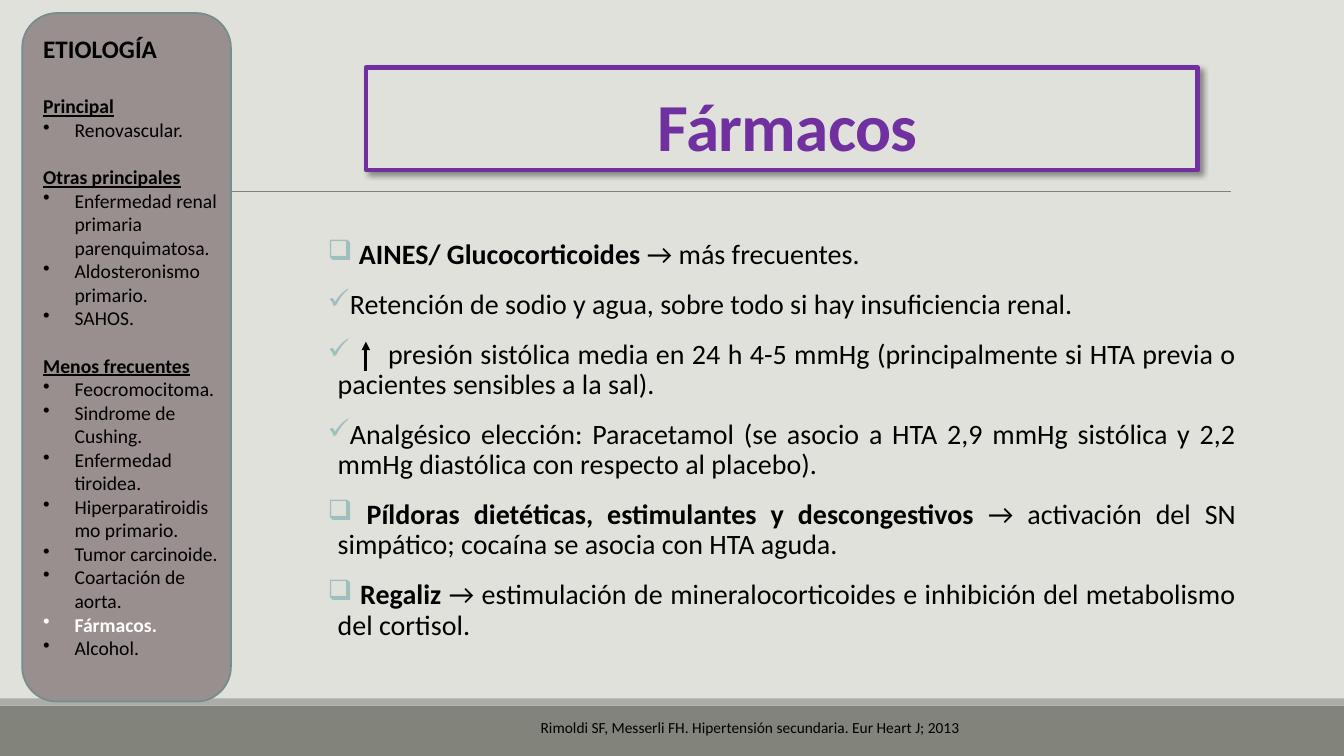
from lxml import etree
from pptx import Presentation
from pptx.dml.color import RGBColor
from pptx.enum.shapes import MSO_CONNECTOR, MSO_SHAPE
from pptx.enum.text import MSO_ANCHOR, PP_ALIGN
from pptx.oxml.ns import qn
from pptx.util import Cm, Pt

RECTANGLE = MSO_SHAPE.RECTANGLE
ROUNDED = MSO_SHAPE.ROUNDED_RECTANGLE
STRAIGHT = MSO_CONNECTOR.STRAIGHT
BOTTOM = MSO_ANCHOR.BOTTOM
CENTER, JUSTIFY = PP_ALIGN.CENTER, PP_ALIGN.JUSTIFY

COLORS = {
    "background": "E1E1DB", "footer": "82847C", "footer_edge": "ACADA8",
    "rule": "808080", "purple": "7030A0", "sidebar": "9A8F8F",
    "sidebar_edge": "748D8D", "bullet": "9DBFBE", "text": "000000",
    "current": "FFFFFF",
}
FONT = "Calibri"
CURRENT_TOPIC = "Fármacos."
CAUSES = [
    ("Principal", ["Renovascular."]),
    ("Otras principales", [
        "Enfermedad renal primaria parenquimatosa.",
        "Aldosteronismo primario.", "SAHOS."]),
    ("Menos frecuentes", [
        "Feocromocitoma.", "Sindrome de Cushing.", "Enfermedad tiroidea.",
        "Hiperparatiroidismo primario.", "Tumor carcinoide.",
        "Coartación de aorta.", CURRENT_TOPIC, "Alcohol."]),
]
DRUGS = [
    ("❑", " AINES/ Glucocorticoides ", "→ más frecuentes."),
    ("✓", "", "Retención de sodio y agua, sobre todo si hay insuficiencia renal."),
    ("✓", "", "\tpresión sistólica media en 24 h 4-5 mmHg (principalmente si HTA "
     "previa o pacientes sensibles a la sal)."),
    ("✓", "", "Analgésico elección: Paracetamol (se asocio a HTA 2,9 mmHg sistólica "
     "y 2,2 mmHg diastólica con respecto al placebo)."),
    ("❑", " Píldoras dietéticas, estimulantes y descongestivos ",
     "→ activación del SN simpático; cocaína se asocia con HTA aguda."),
    ("❑", " Regaliz", " → estimulación de mineralocorticoides e inhibición del "
     "metabolismo del cortisol."),
]
CITATION = "Rimoldi SF, Messerli FH. Hipertensión secundaria. Eur Heart J; 2013"


def rgb(name):
    return RGBColor.from_string(COLORS[name])


def apply(target, values):
    for key, value in values.items():
        setattr(target, key, value)


def add_child(parent, tag, **attributes):
    return etree.SubElement(parent, qn(tag), attributes)


def write(paragraph, text, size, color="text", **style):
    run = paragraph.add_run()
    run.text = text
    apply(run.font, {"name": FONT, "size": Pt(size), "bold": False, **style})
    run.font.color.rgb = rgb(color)
    return run


def next_paragraph(frame):
    first = frame.paragraphs[0]
    return first if not first.runs else frame.add_paragraph()


def add_bullet(paragraph, symbol, indent, color=None, tab=None):
    properties = paragraph._p.get_or_add_pPr()
    properties.set("marL", str(indent))
    properties.set("indent", str(-indent))
    if color:
        add_child(add_child(properties, "a:buClr"), "a:srgbClr", val=COLORS[color])
    add_child(properties, "a:buChar", char=symbol)
    if tab:
        add_child(add_child(properties, "a:tabLst"), "a:tab", pos=str(tab), algn="l")


def paint(shape, fill, line=None, width=0):
    shape.shadow.inherit = False
    shape.fill.solid()
    shape.fill.fore_color.rgb = rgb(fill)
    if line:
        shape.line.color.rgb = rgb(line)
        shape.line.width = Pt(width)
    else:
        shape.line.fill.background()


def add_block(slide, kind, box, *colors):
    block = slide.shapes.add_shape(kind, *box)
    paint(block, *colors)


def add_text(slide, box, **margins):
    frame = slide.shapes.add_textbox(*box).text_frame
    apply(frame, {"word_wrap": True, **margins})
    return frame


def add_line(slide, start, end, color, width):
    line = slide.shapes.add_connector(STRAIGHT, *start, *end)
    line.line.color.rgb = rgb(color)
    line.line.width = Pt(width)
    add_child(line._element.spPr, "a:effectLst")
    return line


def draw_title(slide, box):
    title = slide.shapes.title
    apply(title, dict(zip(("left", "top", "width", "height"), box)))
    paint(title, "background", "purple", 3)
    shadow = add_child(title._element.spPr.find(qn("a:effectLst")), "a:outerShdw",
                       blurRad=str(Pt(4)), dist=str(Pt(3)), dir="2700000",
                       algn="tl", rotWithShape="0")
    add_child(add_child(shadow, "a:srgbClr", val=COLORS["text"]), "a:alpha", val="40000")
    apply(title.text_frame, {"vertical_anchor": BOTTOM, "margin_left": Cm(0.56)})
    heading = title.text_frame.paragraphs[0]
    apply(heading, {"alignment": CENTER, "line_spacing": 0.85})
    run = write(heading, "Fármacos", 48, "purple", bold=True)
    run.font._element.set("spc", "-50")


def draw_sidebar(slide, box):
    left, top, width, height = box
    add_block(slide, ROUNDED, box, "sidebar", "sidebar_edge", 1.25)
    frame = add_text(slide, (left + Cm(0.28), top + Cm(0.38),
                             width - Cm(0.31), height - Cm(0.5)))
    write(next_paragraph(frame), "ETIOLOGÍA", 18, bold=True)
    for group, (heading, causes) in enumerate(CAUSES):
        paragraph = next_paragraph(frame)
        paragraph.space_before = Pt(17 if group else 22)
        write(paragraph, heading, 14, bold=True, underline=True)
        for cause in causes:
            item = next_paragraph(frame)
            add_bullet(item, "•", Cm(0.79))
            current = cause == CURRENT_TOPIC
            write(item, cause, 14, "current" if current else "text", bold=current)


def draw_drugs(slide, box):
    left, top, _, _ = box
    frame = add_text(slide, box, margin_left=0, margin_right=0)
    for index, (symbol, drug, effect) in enumerate(DRUGS):
        paragraph = next_paragraph(frame)
        tab = Cm(1.52) if effect.startswith("\t") else None
        add_bullet(paragraph, symbol, Cm(0.25), "bullet", tab)
        apply(paragraph, {"alignment": JUSTIFY, "line_spacing": 0.9,
                          "space_before": Pt(12 if index else 0), "space_after": Pt(2)})
        if drug:
            write(paragraph, drug, 20, bold=True)
        write(paragraph, effect, 20)
    arrow_x = left + Cm(0.96)
    arrow = add_line(slide, (arrow_x, top + Cm(3.41)), (arrow_x, top + Cm(2.67)), "text", 2)
    add_child(arrow.line._get_or_add_ln(), "a:tailEnd", type="triangle")


def draw_footer(slide, box):
    left, top, width, height = box
    edge = Cm(0.18)
    add_block(slide, RECTANGLE, (left, top + edge, width, height - edge), "footer")
    add_block(slide, RECTANGLE, (left, top, width, edge), "footer_edge")
    frame = add_text(slide, (left + Cm(10.44), top + Cm(0.36), Cm(16.94), Cm(0.74)))
    paragraph = next_paragraph(frame)
    paragraph.alignment = CENTER
    write(paragraph, CITATION, 11)


def main():
    deck = Presentation()
    deck.slide_width, deck.slide_height = Cm(33.87), Cm(19.05)
    slide = deck.slides.add_slide(deck.slide_layouts[5])
    slide.background.fill.solid()
    slide.background.fill.fore_color.rgb = rgb("background")
    draw_footer(slide, (0, Cm(17.6), deck.slide_width, Cm(1.45)))
    add_line(slide, (Cm(3.33), Cm(4.83)), (Cm(31.01), Cm(4.83)), "rule", 0.5)
    draw_title(slide, (Cm(9.22), Cm(1.7), Cm(20.96), Cm(2.59)))
    draw_sidebar(slide, (Cm(0.56), Cm(0.33), Cm(5.26), Cm(17.35)))
    draw_drugs(slide, (Cm(8.26), Cm(5.94), Cm(22.89), Cm(11.99)))
    deck.save("out.pptx")


if __name__ == "__main__":
    main()
